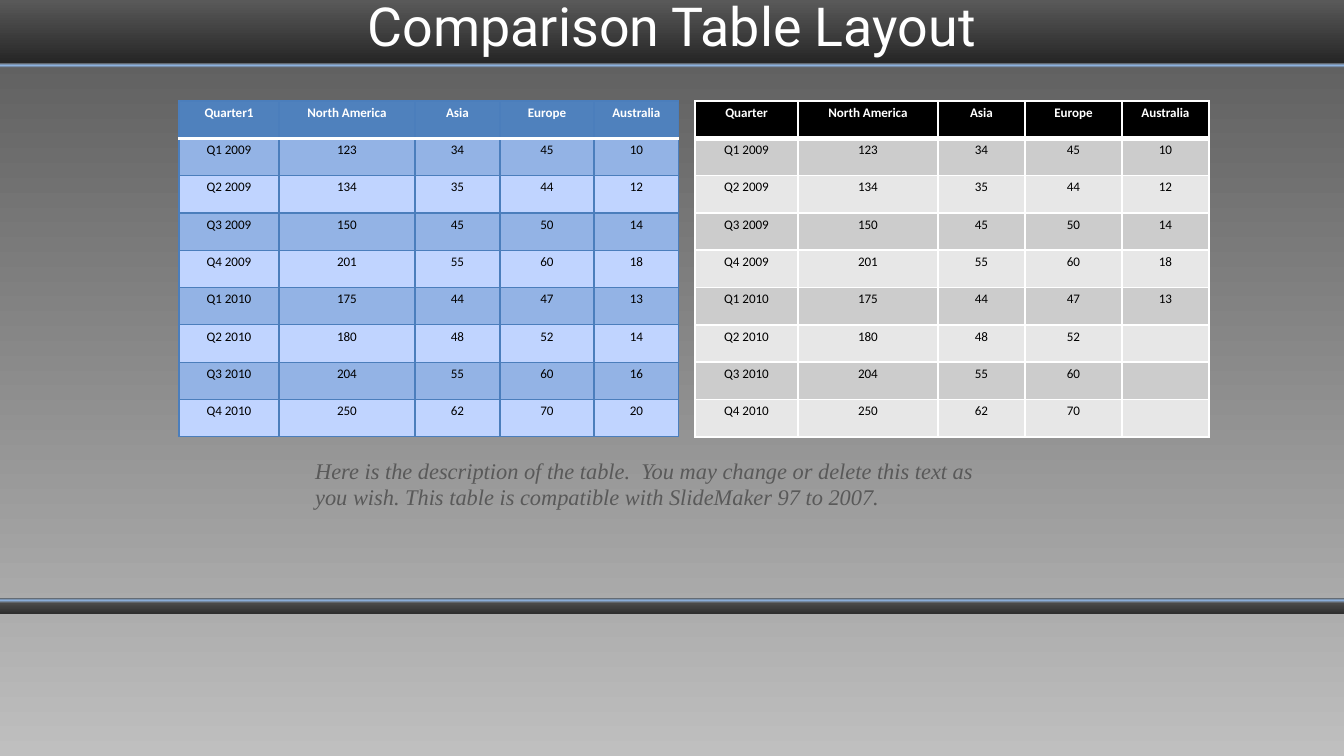
import copy

import lxml.etree
import pptx
import pptx.dml.color
import pptx.enum.shapes
import pptx.enum.text
import pptx.oxml.ns
import pptx.util

PX = 914400 / 134.4
QN = pptx.oxml.ns.qn
ALIGN = pptx.enum.text.PP_ALIGN
MIDDLE = pptx.enum.text.MSO_ANCHOR.MIDDLE

REGIONS = ["North America", "Asia", "Europe", "Australia"]
SALES = [
    ["Q1 2009", 123, 34, 45, 10],
    ["Q2 2009", 134, 35, 44, 12],
    ["Q3 2009", 150, 45, 50, 14],
    ["Q4 2009", 201, 55, 60, 18],
    ["Q1 2010", 175, 44, 47, 13],
    ["Q2 2010", 180, 48, 52, 14],
    ["Q3 2010", 204, 55, 60, 16],
    ["Q4 2010", 250, 62, 70, 20],
]
PARTIAL_SALES = SALES[:5] + [row[:4] + [""] for row in SALES[5:]]
BLUE = {"header": "4F81BD", "bands": ("93B3E5", "C0D4FF"),
        "border": ("4B7EBC", 0.75), "rule": ("FFFFFF", 2)}
GREY = {"header": "000000", "bands": ("CCCCCC", "E7E7E7"),
        "border": ("FFFFFF", 1), "rule": ("FFFFFF", 3)}
ACCENT = [(3, "595959"), (49, "8EB4E3"), (100, "595959")]


def px(length):
    """Turn pixels into EMU."""
    return pptx.util.Emu(round(length * PX))


def rgb(value):
    """Turn a hex string into a colour."""
    return pptx.dml.color.RGBColor.from_string(value)


def set_values(target, values):
    """Set attributes from a dict."""
    for name, value in values.items():
        setattr(target, name, value)


def write(paragraph, words, size, face, color, align, **style):
    """Write one formatted run into a paragraph."""
    paragraph.alignment = align
    run = paragraph.add_run()
    run.text = words
    set_values(run.font, {"size": pptx.util.Pt(size), "name": face, **style})
    run.font.color.rgb = rgb(color)


def fill_gradient(fill, stops):
    """Fill from top to bottom through the given stops."""
    fill.gradient()
    fill.gradient_angle = 270
    last = fill.gradient_stops[1]._gs
    for _ in stops[2:]:
        last.addnext(copy.deepcopy(last))
    for stop, (position, color) in zip(fill.gradient_stops, stops):
        stop.position = position / 100
        stop.color.rgb = rgb(color)


def add_band(slide, box, stops):
    """Draw a horizontal gradient band."""
    band = slide.shapes.add_shape(
        pptx.enum.shapes.MSO_SHAPE.RECTANGLE, *map(px, box))
    band.shadow.inherit = False
    band.line.fill.background()
    fill_gradient(band.fill, stops)


def add_frame(slide):
    """Draw the background with its header and footer bands."""
    fill_gradient(slide.background.fill, [(0, "595959"), (100, "BFBFBF")])
    add_band(slide, (0, 598, 1344, 16), [(0, "595959"), (100, "2E2E2E")])
    add_band(slide, (0, 0, 1344, 63), [(0, "595959"), (100, "262626")])
    add_band(slide, (-26, 63, 1378, 5), ACCENT)
    add_band(slide, (-16, 598, 1378, 5), ACCENT)


def place_title(slide, box, words):
    """Place the title in front of the header band."""
    title = slide.shapes.title
    set_values(title, dict(zip(("left", "top", "width", "height"), map(px, box))))
    set_values(title.text_frame, {
        "vertical_anchor": MIDDLE, "word_wrap": True,
        "auto_size": pptx.enum.text.MSO_AUTO_SIZE.NONE})
    write(title.text_frame.paragraphs[0], words, 28.8, "Roboto", "FFFFFF",
          ALIGN.CENTER)
    slide.shapes._spTree.append(title._element)


def add_border(cell, side, color, width):
    """Draw one side of a cell border."""
    line = lxml.etree.SubElement(
        cell._tc.get_or_add_tcPr(), QN(f"a:ln{side}"),
        w=str(pptx.util.Pt(width)))
    solid = lxml.etree.SubElement(line, QN("a:solidFill"))
    lxml.etree.SubElement(solid, QN("a:srgbClr"), val=color)


def format_cell(cell, value, row, theme):
    """Write and style one cell according to its row."""
    set_values(cell, {"margin_left": px(9), "margin_top": px(4),
                      "margin_right": px(9), "margin_bottom": px(1)})
    rules = {0: "B", 1: "T"}
    for side in "LRTB":
        kind = "rule" if rules.get(row) == side else "border"
        add_border(cell, side, *theme[kind])
    cell.fill.solid()
    is_header = row == 0
    cell.fill.fore_color.rgb = rgb(
        theme["header"] if is_header else theme["bands"][(row - 1) % 2])
    paragraph = cell.text_frame.paragraphs[0]
    if value == "":
        lxml.etree.SubElement(paragraph._p, QN("a:endParaRPr"), sz="700")
    else:
        write(paragraph, str(value), 7, "Calibri",
              "FFFFFF" if is_header else "000000", ALIGN.CENTER, bold=is_header)


def add_sales_table(slide, box, widths, heading, sales, theme):
    """Build a quarterly sales table with equal rows."""
    rows = [[heading] + REGIONS] + sales
    table = slide.shapes.add_table(
        len(rows), len(widths), *map(px, box)).table
    set_values(table, {"first_row": False, "horz_banding": False})
    for column, width in zip(table.columns, widths):
        column.width = px(width)
    for index, values in enumerate(rows):
        table.rows[index].height = px(box[3] / len(rows))
        for cell, value in zip(table.rows[index].cells, values):
            format_cell(cell, value, index, theme)


def add_description(slide, box, words):
    """Place the description below the tables."""
    frame = slide.shapes.add_textbox(*map(px, box)).text_frame
    set_values(frame, {"word_wrap": True, "vertical_anchor": MIDDLE})
    write(frame.paragraphs[0], words, 12, "Times New Roman", "595959",
          ALIGN.LEFT, italic=True)


def main():
    """Build and save the presentation."""
    deck = pptx.Presentation()
    set_values(deck, {"slide_width": px(1344), "slide_height": px(756)})
    slide = deck.slides.add_slide(deck.slide_layouts[5])
    add_frame(slide)
    place_title(slide, (0, 0, 1344, 51), "Comparison Table Layout")
    add_sales_table(slide, (179, 101, 500, 336), (100, 136, 85, 94, 85),
                    "Quarter1", SALES, BLUE)
    add_sales_table(slide, (695, 101, 514, 336), (103, 140, 87, 97, 87),
                    "Quarter", PARTIAL_SALES, GREY)
    add_description(
        slide, (302, 450, 716, 67),
        "Here is the description of the table.  You may change or delete this "
        "text as you wish. This table is compatible with SlideMaker 97 to 2007.")
    deck.save("out.pptx")


if __name__ == "__main__":
    main()
